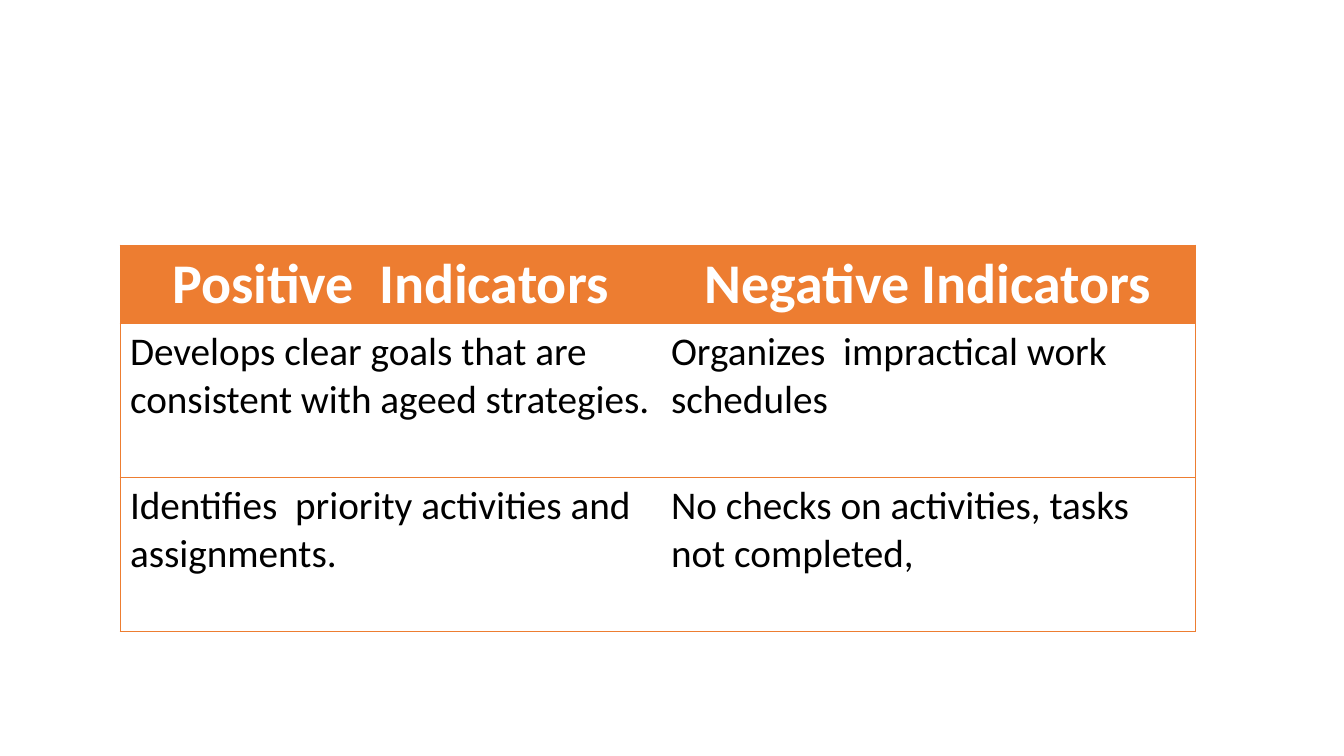
from lxml.etree import SubElement
from pptx import Presentation
from pptx.dml.color import RGBColor
from pptx.enum.text import PP_ALIGN as Align
from pptx.oxml.ns import qn
from pptx.util import Pt

INDICATORS = [
    ("Positive  Indicators", "Negative Indicators"),
    ("Develops clear goals that are consistent with ageed strategies.",
     "Organizes  impractical work schedules"),
    ("Identifies  priority activities and assignments.",
     "No checks on activities, tasks not completed,"),
]
COLUMN_WIDTHS = (541, 534)
ROW_HEIGHTS = (78, 154, 154)
LEFT, TOP = 120, 245
SLIDE_SIZE = (1344, 756)
ORANGE = RGBColor(0xED, 0x7D, 0x31)
WHITE = RGBColor(0xFF, 0xFF, 0xFF)
BLACK = RGBColor(0, 0, 0)


def px(length):
    """Turn slide pixels into EMU."""
    return round(length * 914400 / 100.8)


def set_borders(cell, visible_sides):
    """Draw thin orange lines on the given sides and clear the others."""
    properties = cell._tc.get_or_add_tcPr()
    for side in "LRTB":
        line = SubElement(properties, qn(f"a:ln{side}"), w=str(Pt(0.5)))
        if side in visible_sides:
            fill = SubElement(line, qn("a:solidFill"))
            SubElement(fill, qn("a:srgbClr"), val=str(ORANGE))
        else:
            SubElement(line, qn("a:noFill"))


def fill_cell(cell, wording, is_header, outer_side):
    """Write and format one cell of the indicator table."""
    set_borders(cell, "TB" + outer_side)
    if is_header:
        cell.fill.solid()
        cell.fill.fore_color.rgb = ORANGE
    else:
        cell.fill.background()
    paragraph = cell.text_frame.paragraphs[0]
    paragraph.text = wording
    paragraph.alignment = Align.CENTER if is_header else Align.LEFT
    font = paragraph.runs[0].font
    font.name = "Calibri"
    font.size = Pt(40 if is_header else 28)
    font.bold = is_header
    font.color.rgb = WHITE if is_header else BLACK


def main():
    """Build the slide and save it."""
    deck = Presentation()
    deck.slide_width, deck.slide_height = map(px, SLIDE_SIZE)
    slide = deck.slides.add_slide(deck.slide_layouts[6])
    table = slide.shapes.add_table(
        len(ROW_HEIGHTS), len(COLUMN_WIDTHS), px(LEFT), px(TOP),
        px(sum(COLUMN_WIDTHS)), px(sum(ROW_HEIGHTS))).table
    table.horz_banding = False
    for column, width in zip(table.columns, COLUMN_WIDTHS):
        column.width = px(width)
    for row, height in zip(table.rows, ROW_HEIGHTS):
        row.height = px(height)
    for row_index, row_wording in enumerate(INDICATORS):
        for column_index, wording in enumerate(row_wording):
            fill_cell(table.cell(row_index, column_index), wording,
                      row_index == 0, "LR"[column_index])
    deck.save("out.pptx")


if __name__ == "__main__":
    main()
